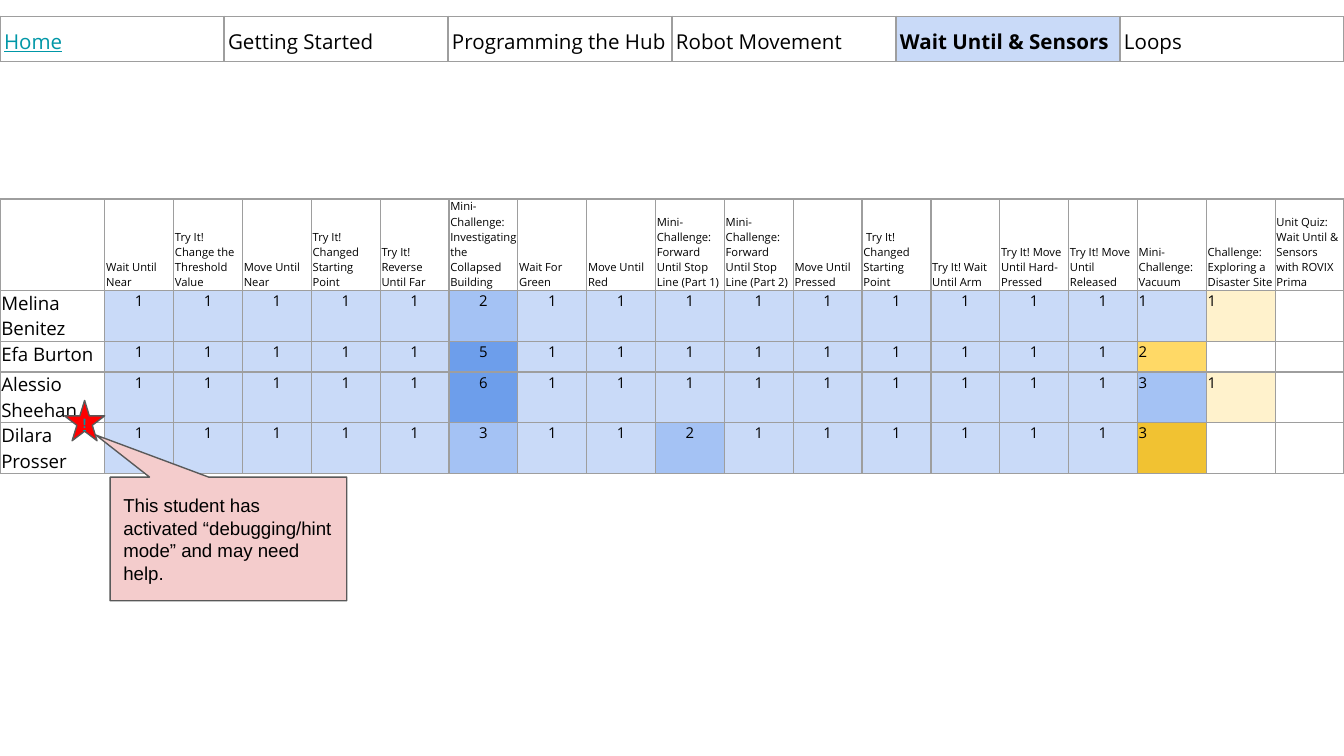
import pptx
import pptx.util
import pptx.dml.color
import pptx.enum.shapes
import pptx.enum.text
import pptx.oxml
import pptx.oxml.ns
from pptx.util import Inches

MIDDLE = pptx.enum.text.MSO_ANCHOR.MIDDLE
BOTTOM = pptx.enum.text.MSO_ANCHOR.BOTTOM
TOP = pptx.enum.text.MSO_ANCHOR.TOP
LEFT = pptx.enum.text.PP_ALIGN.LEFT
CENTER = pptx.enum.text.PP_ALIGN.CENTER
SHAPE = pptx.enum.shapes.MSO_SHAPE


def rgb(value):
    return pptx.dml.color.RGBColor.from_string(value)


def fill_cell(cell, text, size, fill=None, anchor=TOP, align=LEFT, inset=(0.01, 0)):
    """Write, border and fill one table cell; return its run."""
    cell.margin_left = cell.margin_right = Inches(inset[0])
    cell.margin_top = cell.margin_bottom = Inches(inset[1])
    cell.vertical_anchor = anchor
    tcPr = cell._tc.get_or_add_tcPr()
    for side in ("lnL", "lnR", "lnT", "lnB"):
        tcPr.append(pptx.oxml.parse_xml(
            f'<a:{side} {pptx.oxml.ns.nsdecls("a")} w="9525"><a:solidFill>'
            f'<a:srgbClr val="9E9E9E"/></a:solidFill></a:{side}>'))
    if fill:
        cell.fill.solid()
        cell.fill.fore_color.rgb = rgb(fill)
    else:
        cell.fill.background()
    p = cell.text_frame.paragraphs[0]
    p.alignment = align
    if not text:
        p._p.get_or_add_endParaRPr().set("sz", str(size * 100))
        return None
    r = p.add_run()
    r.text = text
    r.font.size = pptx.util.Pt(size)
    r.font.name = "Open Sans"
    r.font.color.rgb = rgb("000000")
    return r


prs = pptx.Presentation()
prs.slide_width = Inches(10)
prs.slide_height = Inches(10 * 9 / 16)
s = prs.slides.add_slide(prs.slide_layouts[6])

# Progress table
lessons = [
    "Wait Until Near", "Try It! Change the Threshold Value", "Move Until Near",
    "Try It! Changed Starting Point", "Try It! Reverse Until Far",
    "Mini-Challenge: Investigating the Collapsed Building",
    "Wait For Green", "Move Until Red",
    "Mini-Challenge: Forward Until Stop Line (Part 1)",
    "Mini-Challenge: Forward Until Stop Line (Part 2)",
    "Move Until Pressed", " Try It! Changed Starting Point",
    "Try It! Wait Until Arm", "Try It! Move Until Hard-Pressed",
    "Try It! Move Until Released", "Mini-Challenge: Vacuum",
    "Challenge: Exploring a Disaster Site",
    "Unit Quiz: Wait Until & Sensors with ROVIX Prima",
]
# One digit per lesson, in lesson order; missing digits are lessons not started
attempts = {
    "Melina Benitez": "11111211111111111",
    "Efa Burton": "1111151111111112",
    "Alessio Sheehan": "11111611111111131",
    "Dilara Prosser": "1111131121111113",
}
attempt_fills = {"1": "C9DAF8", "2": "A4C2F4", "3": "A4C2F4",
                 "5": "6D9EEB", "6": "6D9EEB"}
special_fills = {(1, 17): "FFF2CC", (2, 16): "FFD966",
                 (3, 17): "FFF2CC", (4, 16): "F1C232"}
row_heights = [0.57, 0.23, 0.23, 0.23, 0.35]
name_width = 0.78

progress = s.shapes.add_table(len(row_heights), len(lessons) + 1, 0, Inches(1.48),
                              Inches(10), Inches(sum(row_heights))).table
progress.first_row = progress.horz_banding = False
for row, height in zip(progress.rows, row_heights):
    row.height = Inches(height)
for i, column in enumerate(progress.columns):
    column.width = Inches((10 - name_width) / len(lessons) if i else name_width)

for col, lesson in enumerate([""] + lessons):
    fill_cell(progress.cell(0, col), lesson, 6, anchor=BOTTOM)
for row, (student, counts) in enumerate(attempts.items(), 1):
    fill_cell(progress.cell(row, 0), student, 10)
    for col, count in enumerate(counts.ljust(len(lessons)), 1):
        fill = special_fills.get((row, col), attempt_fills.get(count))
        fill_cell(progress.cell(row, col), count.strip(), 8, fill,
                  align=CENTER if col < 16 else LEFT)

# Navigation bar
units = ["Home", "Getting Started", "Programming the Hub", "Robot Movement",
         "Wait Until & Sensors", "Loops"]
current = "Wait Until & Sensors"
nav = s.shapes.add_table(1, len(units), 0, Inches(0.12), Inches(10), Inches(0.34)).table
nav.first_row = nav.horz_banding = False
for col, unit in enumerate(units):
    nav.columns[col].width = Inches(10 / len(units))
    r = fill_cell(nav.cell(0, col), unit, 11, "C9DAF8" if unit == current else None,
                  BOTTOM, inset=(0.03, 0.05))
    r.font.bold = unit == current
    if unit == "Home":
        r.font.underline = True
        r.font.color.rgb = rgb("0097A7")

# Hint marker and its callout
star = s.shapes.add_shape(SHAPE.STAR_5_POINT, Inches(0.48), Inches(2.98),
                          Inches(0.3), Inches(0.3))
callout = s.shapes.add_shape(SHAPE.ROUNDED_RECTANGULAR_CALLOUT, Inches(0.82),
                             Inches(3.55), Inches(1.76), Inches(0.92))
for i, value in enumerate((-0.56, -0.84, 0)):
    callout.adjustments[i] = value
note = "This student has activated “debugging/hint mode” and may need help."
for sp, fill, text, size, font, color, inset, align, anchor in (
        (star, "FF0000", "!", 7, "Roboto Condensed", "0097A7", 0, CENTER, TOP),
        (callout, "F4CCCC", note, 10, "Arial", "000000", 0.1, LEFT, MIDDLE)):
    sp.shadow.inherit = False
    sp.fill.solid()
    sp.fill.fore_color.rgb = rgb(fill)
    sp.line.color.rgb = rgb("595959")
    sp.line.width = pptx.util.Pt(0.75)
    tf = sp.text_frame
    tf.word_wrap = True
    tf.vertical_anchor = anchor
    tf.margin_left = tf.margin_right = tf.margin_top = tf.margin_bottom = Inches(inset)
    p = tf.paragraphs[0]
    p.alignment = align
    r = p.add_run()
    r.text = text
    r.font.size = pptx.util.Pt(size)
    r.font.name = font
    r.font.color.rgb = rgb(color)
    r.font.bold = r.font.underline = sp is star

prs.save("out.pptx")
